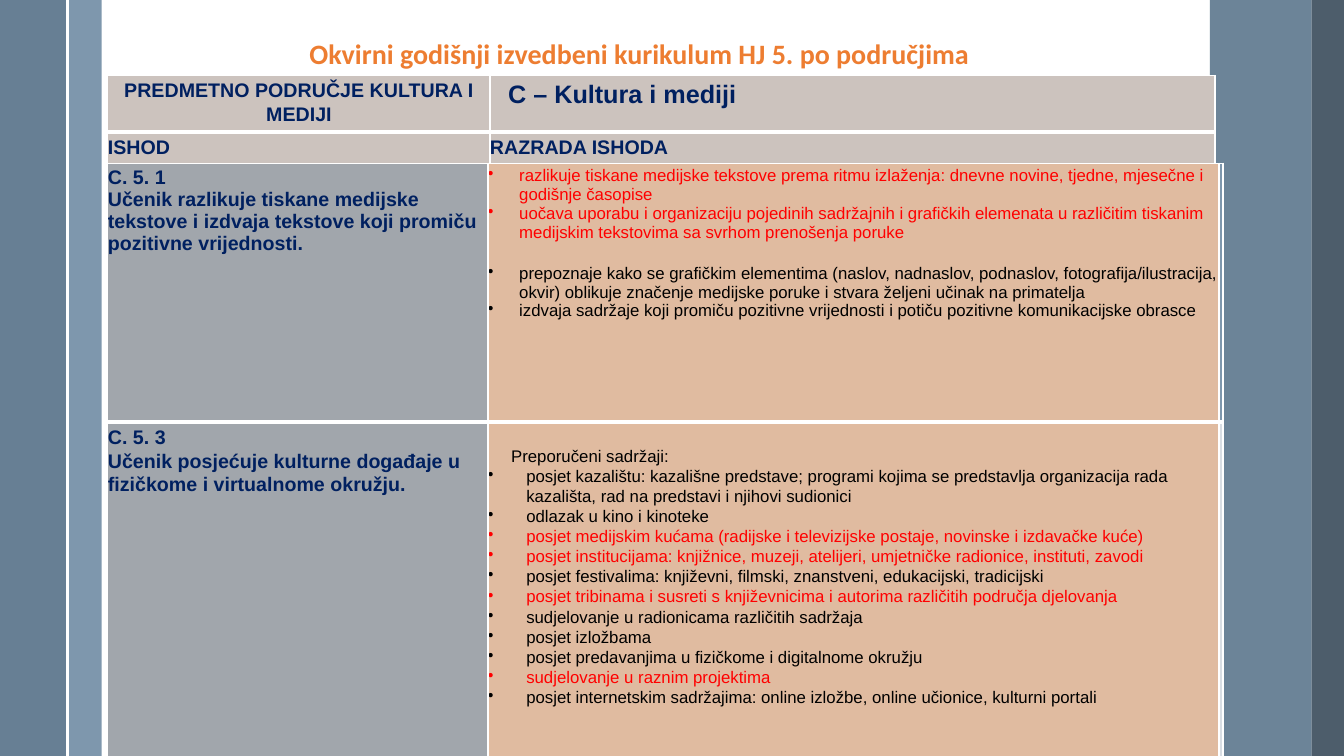
from lxml.etree import SubElement
from pptx import Presentation
from pptx.dml.color import RGBColor
from pptx.enum.shapes import MSO_CONNECTOR, MSO_SHAPE
from pptx.enum.text import PP_ALIGN
from pptx.oxml import parse_xml
from pptx.oxml.ns import nsdecls, qn
from pptx.util import Inches, Pt

WHITE, NAVY, RED, BLACK = "FFFFFF", "002060", "FF0000", "000000"
SAND, GREY, PEACH = "CCC3BE", "A1A6AC", "E0BBA0"

BANDS = [  # left, width, colour, opacity in percent
    (0.68, 0.33, "7E97AD", 100),
    (0, 0.67, "577289", 90),
    (12, 1.01, "577289", 87),
    (13.01, 0.33, "3A4C5B", 90),
]

MEDIA = [
    ("razlikuje tiskane medijske tekstove prema ritmu izlaženja: dnevne novine, "
     "tjedne, mjesečne i godišnje časopise", RED),
    ("uočava uporabu i organizaciju pojedinih sadržajnih i grafičkih elemenata u "
     "različitim tiskanim medijskim tekstovima sa svrhom prenošenja poruke", RED),
    ("prepoznaje kako se grafičkim elementima (naslov, nadnaslov, podnaslov, "
     "fotografija/ilustracija, okvir) oblikuje značenje medijske poruke i stvara "
     "željeni učinak na primatelja", BLACK),
    ("izdvaja sadržaje koji promiču pozitivne vrijednosti i potiču pozitivne "
     "komunikacijske obrasce", BLACK),
]

VISITS = [
    ("posjet kazalištu: kazališne predstave; programi kojima se predstavlja "
     "organizacija rada kazališta, rad na predstavi i njihovi sudionici", BLACK),
    ("odlazak u kino i kinoteke", BLACK),
    ("posjet medijskim kućama (radijske i televizijske postaje, novinske i "
     "izdavačke kuće)", RED),
    ("posjet institucijama: knjižnice, muzeji, atelijeri, umjetničke radionice, "
     "instituti, zavodi", RED),
    ("posjet festivalima: književni, filmski, znanstveni, edukacijski, tradicijski",
     BLACK),
    ("posjet tribinama i susreti s književnicima i autorima različitih područja "
     "djelovanja", RED),
    ("sudjelovanje u radionicama različitih sadržaja", BLACK),
    ("posjet izložbama", BLACK),
    ("posjet predavanjima u fizičkome i digitalnome okružju", BLACK),
    ("sudjelovanje u raznim projektima", RED),
    ("posjet internetskim sadržajima: online izložbe, online učionice, kulturni "
     "portali", BLACK),
]


def paint(target, color):
    """Give a fill or line format a solid colour."""
    target.solid()
    target.fore_color.rgb = RGBColor.from_string(color)


def add_band(slide, left, width, color, alpha):
    band = slide.shapes.add_shape(MSO_SHAPE.RECTANGLE, Inches(left), 0,
                                  Inches(width), Inches(7.5))
    band.shadow.inherit = False
    band.line.fill.background()
    paint(band.fill, color)
    if alpha < 100:
        tone = band.fill._xPr.find(".//" + qn("a:srgbClr"))
        SubElement(tone, qn("a:alpha")).set("val", str(alpha * 1000))


def add_rule(slide, left):
    rule = slide.shapes.add_connector(MSO_CONNECTOR.STRAIGHT, Inches(left), 0,
                                      Inches(left), Inches(7.5))
    paint(rule.line.fill, WHITE)
    rule.line.width = Pt(1.5)
    SubElement(rule._element.spPr, qn("a:effectLst"))


def write(para, text, size, color, bold=False, name="Arial", left=0, bullet=False,
          **format):
    """Fill a paragraph; other keywords are paragraph attributes."""
    props = para._p.get_or_add_pPr()
    if left:
        props.set("marL", str(Inches(left)))
        props.set("indent", str(Inches(-left) if bullet else 0))
    if bullet:
        SubElement(props, qn("a:buChar")).set("char", "•")
    for key, value in format.items():
        setattr(para, key, value)
    run = para.add_run()
    run.text = text
    for key, value in {"size": Pt(size), "bold": bold, "name": name}.items():
        setattr(run.font, key, value)
    run.font.color.rgb = RGBColor.from_string(color)


def add_title(slide, text):
    box = slide.shapes.add_textbox(Inches(2.97), Inches(0.31), Inches(8.43), Inches(0.44))
    box.text_frame.word_wrap = True
    write(box.text_frame.paragraphs[0], text, 20, "ED7D31", True, "Calibri")


def edge(cell, base):
    """Draw white cell borders, the lower one with width base."""
    props = cell._tc.get_or_add_tcPr()
    for spot, side in enumerate("LRTB"):
        width = Pt(base if side == "B" else 1)
        props.insert(spot, parse_xml(
            f'<a:ln{side} {nsdecls("a")} w="{width}"><a:solidFill>'
            f'<a:srgbClr val="{WHITE}"/></a:solidFill></a:ln{side}>'))


def add_grid(slide, top, cols, rows, fills):
    """Add a table with plain filled cells and return it."""
    frame = slide.shapes.add_table(len(rows), len(cols), Inches(1.07), Inches(top),
                                   Inches(sum(cols)), Inches(sum(rows)))
    grid = frame.table
    grid.first_row = grid.horz_banding = False
    for col, width in zip(grid.columns, cols):
        col.width = Inches(width)
    for r, height in enumerate(rows):
        grid.rows[r].height = Inches(height)
        for c, color in enumerate(fills[r]):
            cell = grid.cell(r, c)
            cell.margin_left = cell.margin_right = 0
            cell.margin_top = cell.margin_bottom = Inches(0.03)
            paint(cell.fill, color)
            edge(cell, 1 if r else 3)
    return grid


def fill_cell(cell, items):
    """Write one paragraph for each dict of write() arguments."""
    frame = cell.text_frame
    for i, item in enumerate(items):
        write(frame.add_paragraph() if i else frame.paragraphs[0], **item)


def heads(*texts, **format):
    """Describe bold navy paragraphs."""
    return [{"text": t, "size": 14, "color": NAVY, "bold": True, **format} for t in texts]


def points(rows, left, **format):
    """Describe bulleted paragraphs."""
    return [{"text": t, "size": 12, "color": c, "left": left, "bullet": True, **format}
            for t, c in rows]


def add_header(slide):
    grid = add_grid(slide, 0.75, [3.79, 7.19], [0.56, 0.31], [[SAND] * 2] * 2)
    loose = {"line_spacing": 1.07}
    fill_cell(grid.cell(0, 0), heads("PREDMETNO PODRUČJE KULTURA I MEDIJI",
                                     alignment=PP_ALIGN.CENTER, **loose))
    fill_cell(grid.cell(0, 1), heads("C – Kultura i mediji", size=18, left=0.18, **loose))
    fill_cell(grid.cell(1, 0), heads("ISHOD", **loose))
    fill_cell(grid.cell(1, 1), heads("RAZRADA ISHODA", **loose))


def add_goals(slide):
    grid = add_grid(slide, 1.62, [3.77, 7.25, 0.04], [2.57, 3.53],
                    [[GREY, PEACH, "7E97AD"], [GREY, PEACH, "D8DDE3"]])
    fill_cell(grid.cell(0, 0), heads(
        "C. 5. 1", "Učenik razlikuje tiskane medijske tekstove i izdvaja tekstove "
        "koji promiču pozitivne vrijednosti."))
    tasks = points(MEDIA, 0.31)
    tasks[2]["space_before"] = Pt(16)
    fill_cell(grid.cell(0, 1), tasks)
    fill_cell(grid.cell(1, 0), heads(
        "C. 5. 3", "Učenik posjećuje kulturne događaje u fizičkome i virtualnome "
        "okružju.", line_spacing=1.07))
    intro = {"text": "Preporučeni sadržaji:", "size": 12, "color": BLACK,
             "left": 0.23, "line_spacing": 1.07}
    grid.cell(1, 1).margin_top = Inches(0.23)
    fill_cell(grid.cell(1, 1), [intro] + points(VISITS, 0.38, line_spacing=1.07))


def main():
    deck = Presentation()
    deck.slide_width, deck.slide_height = Inches(13.33), Inches(7.5)
    slide = deck.slides.add_slide(deck.slide_layouts[6])
    for band in BANDS:
        add_band(slide, *band)
    add_rule(slide, 0.67)
    add_title(slide, "Okvirni godišnji izvedbeni kurikulum HJ 5. po područjima")
    add_header(slide)
    add_goals(slide)
    deck.save("out.pptx")


if __name__ == "__main__":
    main()
